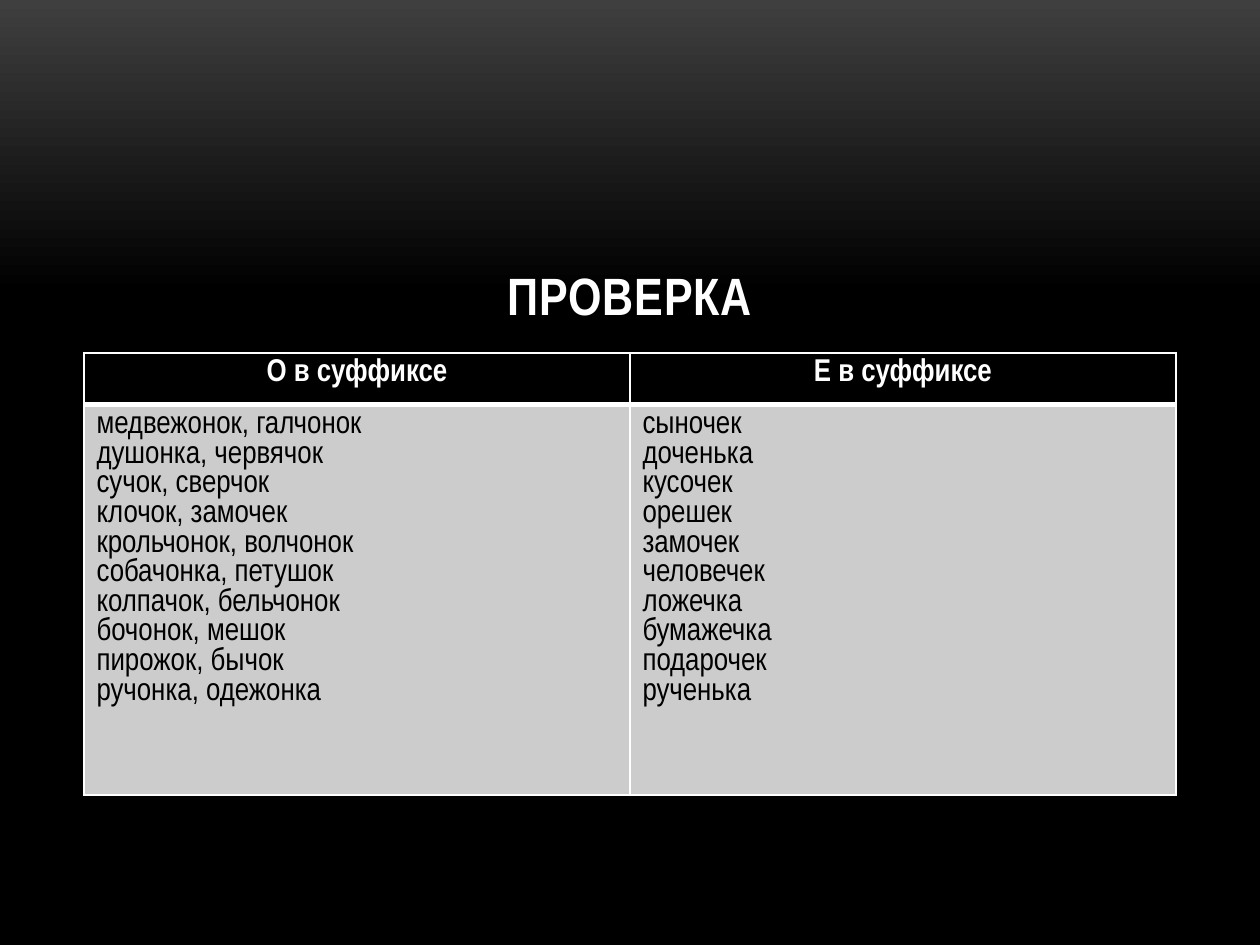
"""Builds the answer-check slide: a title over a two-column table of suffix examples."""
from copy import deepcopy
from dataclasses import dataclass

from lxml.etree import SubElement
from pptx import Presentation
from pptx.dml.color import RGBColor
from pptx.enum.text import MSO_ANCHOR, PP_ALIGN
from pptx.oxml.ns import qn
from pptx.util import Inches, Pt


@dataclass(frozen=True)
class Theme:
    font: str = "Arial Narrow"
    light: str = "FFFFFF"
    dark: str = "000000"
    panel: str = "CCCCCC"
    glow: str = "3F3F3F"
    fade_end: float = 0.31
    title_size: float = 30
    text_size: float = 18
    thin: float = 1
    thick: float = 3


@dataclass(frozen=True)
class Column:
    heading: str
    words: tuple[str, ...]


@dataclass(frozen=True)
class RowStyle:
    height: float
    fill: str
    color: str
    bold: bool
    align: PP_ALIGN
    top: float
    bottom: float


THEME = Theme()
WIDTH, HEIGHT = Inches(10), Inches(7.5)
LEFT, SPAN = int(WIDTH / 15), int(WIDTH * 13 / 15)
TITLE_TOP, TITLE_HEIGHT = Inches(1.39), int(HEIGHT / 6)
TABLE_TOP = Inches(2.8)
HEADER = RowStyle(0.41, THEME.dark, THEME.light, True, PP_ALIGN.CENTER, THEME.thin, THEME.thick)
BODY = RowStyle(2.69, THEME.panel, THEME.dark, False, PP_ALIGN.LEFT, THEME.thick, THEME.thin)
COLUMNS = (
    Column("О в суффиксе", (
        "медвежонок, галчонок", "душонка, червячок", "сучок, сверчок",
        "клочок, замочек", "крольчонок, волчонок", "собачонка, петушок",
        "колпачок, бельчонок", "бочонок, мешок", "пирожок, бычок",
        "ручонка, одежонка")),
    Column("Е в суффиксе", (
        "сыночек", "доченька", "кусочек", "орешек", "замочек", "человечек",
        "ложечка", "бумажечка", "подарочек", "рученька")),
)


def write(tf, lines, size: float, color: str, bold: bool, align: PP_ALIGN) -> None:
    for i, line in enumerate(lines):
        p = tf.add_paragraph() if i else tf.paragraphs[0]
        p.alignment = align
        r = p.add_run()
        r.text = line
        r.font.name, r.font.size, r.font.bold = THEME.font, Pt(size), bold
        r.font.color.rgb = RGBColor.from_string(color)


def paint_background(s) -> None:
    fill = s.background.fill
    fill.gradient()
    fill.gradient_angle = 270
    stops = s.element.find(".//" + qn("a:gsLst"))
    stops.append(deepcopy(stops[-1]))
    shades = ((0, THEME.glow), (THEME.fade_end, THEME.dark), (1, THEME.dark))
    for stop, (position, color) in zip(fill.gradient_stops, shades):
        stop.position = position
        stop.color.rgb = RGBColor.from_string(color)


def add_title(s, text: str) -> None:
    tf = s.shapes.add_textbox(LEFT, TITLE_TOP, SPAN, TITLE_HEIGHT).text_frame
    tf.word_wrap = True
    tf.vertical_anchor = MSO_ANCHOR.BOTTOM
    write(tf, [text], THEME.title_size, THEME.light, True, PP_ALIGN.CENTER)
    tf.paragraphs[0].runs[0].font._element.set("spc", "50")


def fill_cell(cell, lines, style: RowStyle) -> None:
    tcPr = cell._tc.get_or_add_tcPr()
    widths = {"lnL": THEME.thin, "lnR": THEME.thin, "lnT": style.top, "lnB": style.bottom}
    for side, width in widths.items():
        ln = SubElement(tcPr, qn(f"a:{side}"), w=str(Pt(width)))
        SubElement(SubElement(ln, qn("a:solidFill")), qn("a:srgbClr"), val=THEME.light)
    cell.fill.solid()
    cell.fill.fore_color.rgb = RGBColor.from_string(style.fill)
    write(cell.text_frame, lines, THEME.text_size, style.color, style.bold, style.align)


def add_word_table(s, columns: tuple[Column, ...]) -> None:
    styles = (HEADER, BODY)
    height = Inches(sum(style.height for style in styles))
    table = s.shapes.add_table(len(styles), len(columns), LEFT, TABLE_TOP, SPAN, height).table
    for row, style in zip(table.rows, styles):
        row.height = Inches(style.height)
    for i, column in enumerate(columns):
        fill_cell(table.cell(0, i), [column.heading], HEADER)
        fill_cell(table.cell(1, i), column.words, BODY)


def main() -> None:
    prs = Presentation()
    prs.slide_width, prs.slide_height = WIDTH, HEIGHT
    s = prs.slides.add_slide(prs.slide_layouts[6])
    paint_background(s)
    add_title(s, "ПРОВЕРКА")
    add_word_table(s, COLUMNS)
    prs.save("out.pptx")


if __name__ == "__main__":
    main()
